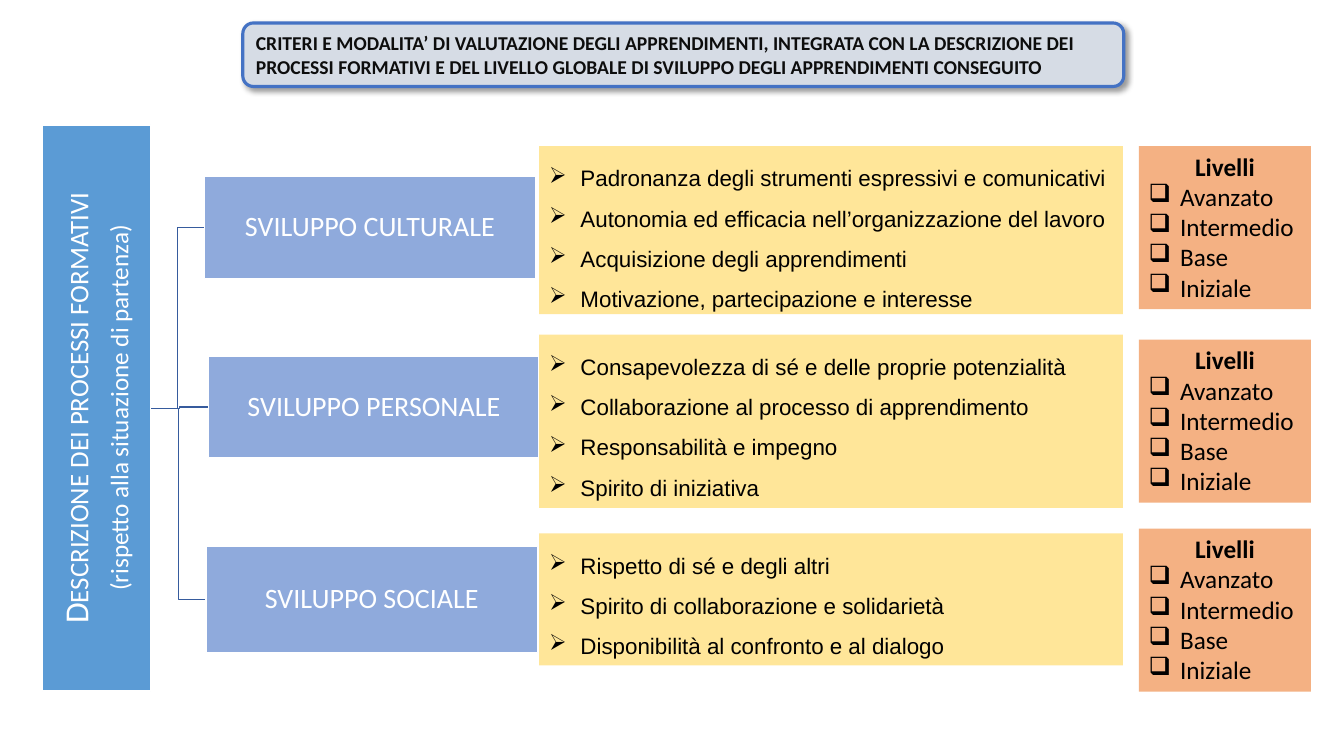
from dataclasses import dataclass

from lxml import etree
from pptx import Presentation
from pptx.dml.color import RGBColor
from pptx.enum.shapes import MSO_SHAPE
from pptx.enum.text import MSO_ANCHOR, PP_ALIGN
from pptx.oxml.ns import qn
from pptx.util import Cm, Pt

RECT = MSO_SHAPE.RECTANGLE
ROUND = MSO_SHAPE.ROUNDED_RECTANGLE
LEFT, CENTER = PP_ALIGN.LEFT, PP_ALIGN.CENTER
TOP, MIDDLE = MSO_ANCHOR.TOP, MSO_ANCHOR.MIDDLE

HUES = {
    "white": "FFFFFF", "black": "000000", "ink": "0D0D0D",
    "side": "5B9BD5", "area": "8FAADC", "goals": "FFE699",
    "levels": "F4B183", "title": "D6DCE5", "edge": "4472C4", "branch": "365B9D",
}
GRADES = ["Avanzato", "Intermedio", "Base", "Iniziale"]


@dataclass
class Box:
    x: float
    y: float
    w: float
    h: float


@dataclass
class Style:
    size: float
    hue: str = "black"
    font: str = "Calibri"
    bold: bool = False
    caps: bool = False
    align: PP_ALIGN = LEFT
    space: float = 1.0
    after: float = 0
    mark: str = ""


@dataclass
class Row:
    name: str
    area: Box
    goals: Box
    goal_list: list[str]
    level_top: float
    bend: float


ROWS = [
    Row("SVILUPPO CULTURALE", Box(5.16, 4.45, 8.33, 2.57), Box(13.59, 3.68, 14.71, 4.24),
        ["Padronanza degli strumenti espressivi e comunicativi",
         "Autonomia ed efficacia nell’organizzazione del lavoro",
         "Acquisizione degli apprendimenti",
         "Motivazione, partecipazione e interesse"], 3.68, 4.48),
    Row("SVILUPPO PERSONALE", Box(5.26, 8.99, 8.33, 2.54), Box(13.59, 8.43, 14.71, 4.37),
        ["Consapevolezza di sé e delle proprie potenzialità",
         "Collaborazione al processo di apprendimento",
         "Responsabilità e impegno",
         "Spirito di iniziativa"], 8.56, 4.53),
    Row("SVILUPPO SOCIALE", Box(5.19, 13.77, 8.36, 2.67), Box(13.59, 13.44, 14.71, 3.33),
        ["Rispetto di sé e degli altri",
         "Spirito di collaborazione e solidarietà",
         "Disponibilità al confronto e al dialogo"], 13.32, 4.5),
]

deck = Presentation()
deck.slide_width, deck.slide_height = Cm(33.87), Cm(19.05)
slide = deck.slides.add_slide(deck.slide_layouts[6])


def tint(hue: str) -> RGBColor:
    return RGBColor.from_string(HUES[hue])


def add_box(box: Box, hue: str, edge: str = "", width: float = 1, form: MSO_SHAPE = RECT,
            anchor: MSO_ANCHOR = TOP, inset: float | None = None):
    shape = slide.shapes.add_shape(form, Cm(box.x), Cm(box.y), Cm(box.w), Cm(box.h))
    shape.shadow.inherit = False
    shape.fill.solid()
    shape.fill.fore_color.rgb = tint(hue)
    if edge:
        shape.line.color.rgb = tint(edge)
        shape.line.width = Pt(width)
    else:
        shape.line.fill.background()
    frame = shape.text_frame
    frame.word_wrap = True
    frame.vertical_anchor = anchor
    if inset is not None:
        frame.margin_left = frame.margin_right = Cm(inset)
        frame.margin_top = frame.margin_bottom = Cm(inset)
    return shape


def write(shape, lines: list[tuple[str, Style]]) -> None:
    frame = shape.text_frame
    for i, (text, style) in enumerate(lines):
        para = frame.add_paragraph() if i else frame.paragraphs[0]
        para.alignment = style.align
        para.line_spacing = style.space
        para.space_after = Pt(style.after)
        if style.mark:
            props = para._p.get_or_add_pPr()
            props.set("marL", str(Cm(0.79)))
            props.set("indent", str(-Cm(0.79)))
            etree.SubElement(props, qn("a:buChar")).set("char", style.mark)
        run = para.add_run()
        run.text = text
        font = run.font
        font.size, font.name, font.bold = Pt(style.size), style.font, style.bold
        font.color.rgb = tint(style.hue)
        if style.caps:
            run._r.get_or_add_rPr().set("cap", "small")


def add_branch(points: list[tuple[float, float]]) -> None:
    spots = [(Cm(x), Cm(y)) for x, y in points]
    path = slide.shapes.build_freeform(*spots[0])
    path.add_line_segments(spots[1:], close=False)
    shape = path.convert_to_shape()
    shape.shadow.inherit = False
    shape.fill.background()
    shape.line.color.rgb = tint("branch")
    shape.line.width = Pt(1)


def add_shade(shape) -> None:
    glow = etree.SubElement(shape._element.spPr.find(qn("a:effectLst")), qn("a:outerShdw"))
    for key, value in (("blurRad", Pt(4)), ("dist", Pt(3)), ("dir", 45 * 60000),
                       ("algn", "tl"), ("rotWithShape", 0)):
        glow.set(key, str(value))
    shade = etree.SubElement(glow, qn("a:srgbClr"), val=HUES["black"])
    etree.SubElement(shade, qn("a:alpha"), val="40000")


# Branches from the side bar to each area
START, STEM = 3.81, 10.29
for row in reversed(ROWS):
    mid = row.area.y + row.area.h / 2
    add_branch([(START, STEM), (row.bend, STEM), (row.bend, mid), (row.area.x, mid)])

# Side bar
side = add_box(Box(-4.7, 8.92, 14.27, 2.72), "side", "white", anchor=MIDDLE, inset=0.05)
side.rotation = 270
write(side, [
    ("Descrizione dei processi formativi",
     Style(24, "white", caps=True, align=CENTER, space=0.9, after=8)),
    ("(rispetto alla situazione di partenza)", Style(18, "white", align=CENTER, space=0.9)),
])

# Areas, goals and levels
name_style = Style(20, "white", align=CENTER, space=0.9)
goal_style = Style(16, font="Arial", space=1.5, mark="➢")
head_style = Style(18, bold=True, align=CENTER)
grade_style = Style(18, mark="❑")
for row in ROWS:
    area = add_box(row.area, "area", "white", anchor=MIDDLE, inset=0.03)
    write(area, [(row.name, name_style)])
    write(add_box(row.goals, "goals"), [(goal, goal_style) for goal in row.goal_list])
    levels = add_box(Box(28.7, row.level_top, 4.34, 4.11), "levels")
    write(levels, [("Livelli", head_style)] + [(grade, grade_style) for grade in GRADES])

# Title
title = add_box(Box(6.12, 0.58, 22.2, 1.6), "title", "edge", 2.25, ROUND)
add_shade(title)
write(title, [(
    "CRITERI E MODALITA’ DI VALUTAZIONE DEGLI APPRENDIMENTI, INTEGRATA CON LA DESCRIZIONE DEI "
    "PROCESSI FORMATIVI E DEL LIVELLO GLOBALE DI SVILUPPO DEGLI APPRENDIMENTI CONSEGUITO",
    Style(14, "ink", bold=True))])

deck.save("out.pptx")
